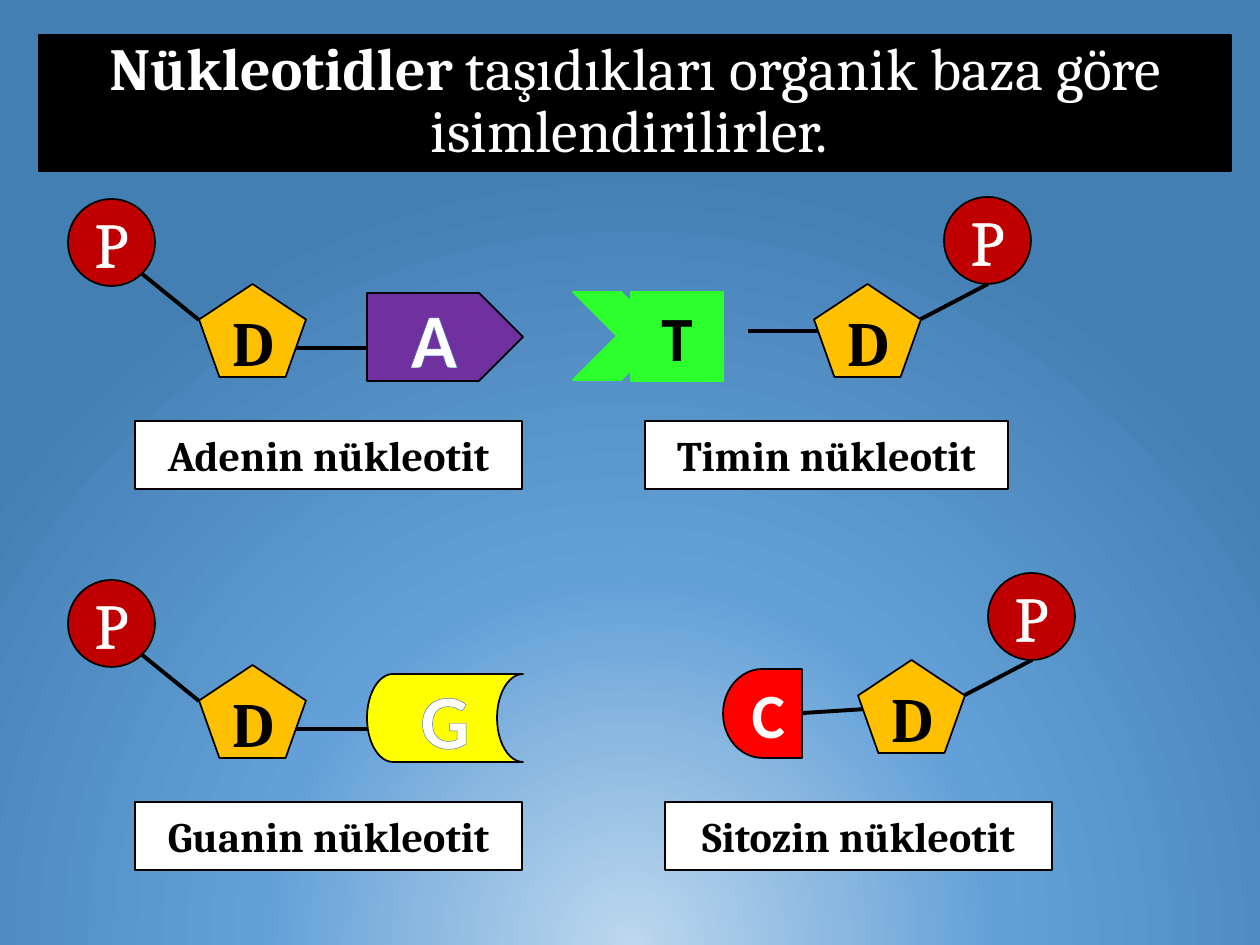
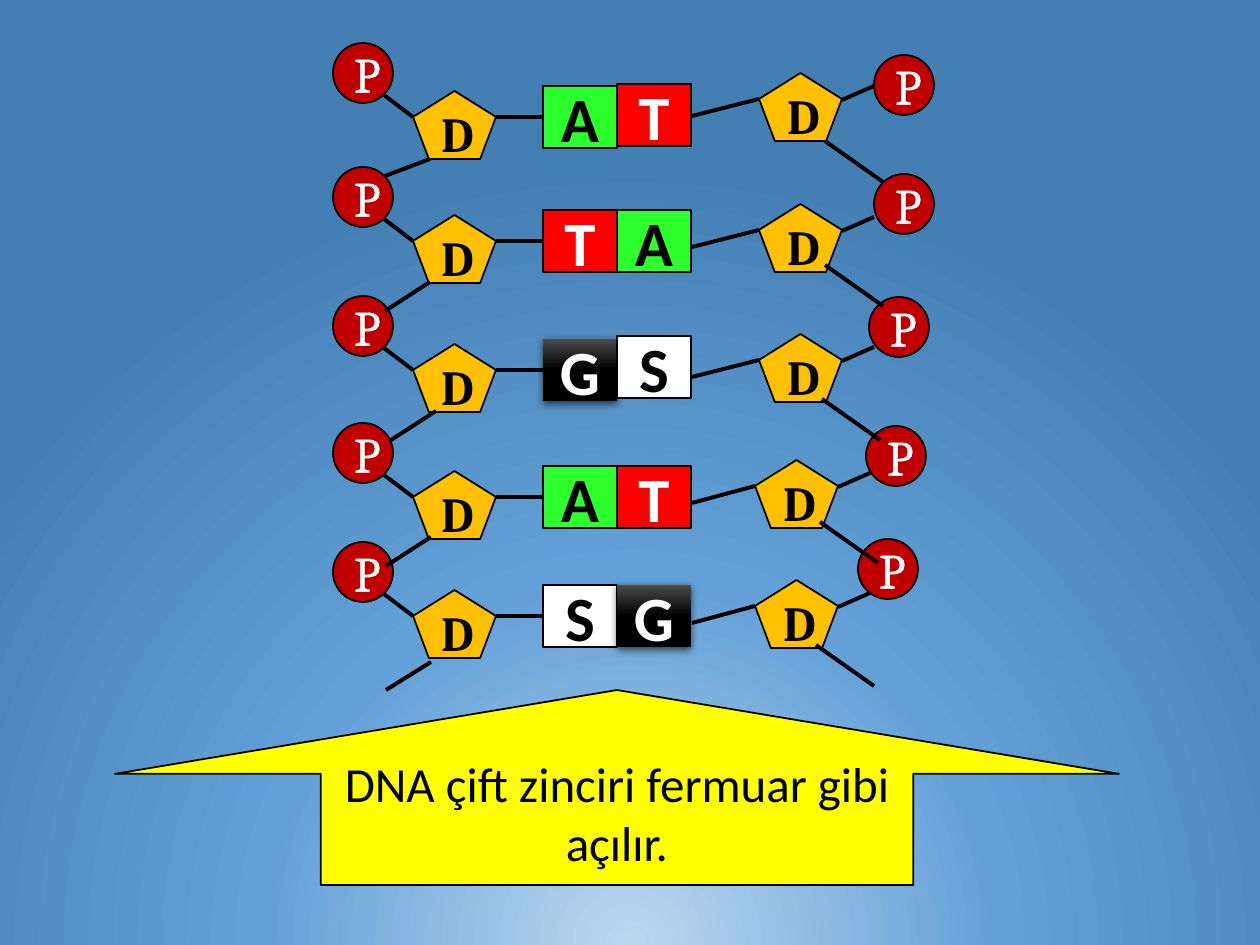
"""Build two slides on nucleotides and the DNA double chain."""
from dataclasses import dataclass
from typing import NamedTuple

from pptx import Presentation
from pptx import oxml
from pptx import util as u
from pptx.dml.color import RGBColor
from pptx.enum import shapes, text
from pptx.oxml import ns

PX = 914400 / 126
SHAPE = shapes.MSO_SHAPE


@dataclass(frozen=True)
class Theme:
    """Colours, fonts and type sizes of the deck."""
    black: str = "000000"
    white: str = "FFFFFF"
    soft_white: str = "FEFEFE"
    phosphate: str = "C00000"
    sugar: str = "FFC000"
    purple: str = "7030A0"
    green: str = "2DFF2D"
    red: str = "FF0000"
    yellow: str = "FFFF00"
    blue_edge: str = "4472C4"
    sky_edge: str = "5B9BD5"
    serif: str = "Cambria"
    sans: str = "Calibri"
    title: float = 34.1
    caption: int = 24
    body: int = 28
    letter: int = 36
    big_letter: int = 44
    backdrop: tuple = ((0, "BDD7EE", 62), (47, "63A0D7", 100), (100, "447FB4", 100))
    gloss: tuple = ((0, "4B4B4B", 100), (50, "000000", 100), (100, "000000", 100))


T = Theme()


class Type(NamedTuple):
    """Character format of one piece of text."""
    size: float
    font: str
    color: str
    bold: bool = False
    edge: str = ""
    edge_pt: float = 0.75
    spacing: int = 0


class Rung(NamedTuple):
    """One base pair and the parts that hold it on both sides."""
    pair: str
    left_top: int
    left_chain: tuple
    drop: int
    mate_top: int
    right_sugar: tuple
    right_phosphate: tuple
    right_chain: tuple


DARK = Type(T.letter, T.sans, T.black, True)
LIGHT = Type(T.letter, T.sans, T.soft_white, True, T.sky_edge, 0.75, 50)
BIG = Type(T.big_letter, T.sans, T.white, True, T.blue_edge, 0.8)
CAPTION = Type(T.caption, T.serif, T.black, True)
BASES = {"A": (T.green, DARK), "T": (T.red, LIGHT), "S": (T.white, DARK), "G": (T.gloss, LIGHT)}

RUNGS = [
    Rung("AT", 91, (430, 159), 17, 84, (759, 73), (874, 55), (825, 141)),
    Rung("TA", 215, (430, 282), 29, 210, (759, 204), (874, 174), (825, 265)),
    Rung("GS", 344, (436, 411), 29, 336, (759, 334), (869, 297), (822, 399)),
    Rung("AT", 471, (431, 537), 29, 466, (755, 460), (866, 426), (820, 522)),
    Rung("SG", 590, (431, 662), 28, 585, (755, 580), (858, 539), (816, 645)),
]


def px(n):
    """Turn px into EMU."""
    return u.Emu(round(n * PX))


def rgb(color):
    """Turn a hex string into a colour."""
    return RGBColor.from_string(color)


def xml(body):
    """Parse a DrawingML fragment."""
    head, rest = body.split(" ", 1)
    return oxml.parse_xml(f"{head} {ns.nsdecls('a')} {rest}")


def set_gradient(fill, holder, stops, direction):
    """Give a fill a gradient with the stops and direction."""
    fill.gradient()
    marks = "".join(
        f'<a:gs pos="{pos * 1000}"><a:srgbClr val="{color}">'
        f'<a:alpha val="{alpha * 1000}"/></a:srgbClr></a:gs>'
        for pos, color, alpha in stops)
    new = xml(f'<a:gradFill rotWithShape="1"><a:gsLst>{marks}</a:gsLst>{direction}</a:gradFill>')
    holder.replace(holder.xpath("a:gradFill")[0], new)


def set_backdrop(master):
    """Give every slide the circular blue gradient."""
    fill = master.background.fill
    fill.gradient()
    set_gradient(fill, master.element.xpath(".//p:bgPr")[0], T.backdrop,
                 '<a:path path="circle"><a:fillToRect l="50000" t="130000" r="50000" b="-30000"/></a:path>')


def style_run(r, kind):
    """Apply a character format to a run."""
    r.font.size, r.font.name, r.font.bold = u.Pt(kind.size), kind.font, kind.bold
    r.font.color.rgb = rgb(kind.color)
    rPr = r.font._element
    if kind.spacing:
        rPr.set("spc", str(kind.spacing))
    if kind.edge:
        rPr.insert(0, xml(f'<a:ln w="{u.Pt(kind.edge_pt)}"><a:solidFill>'
                          f'<a:srgbClr val="{kind.edge}"/></a:solidFill></a:ln>'))


def set_paint(sp, fill, line=T.black):
    """Set a solid fill and a thin line."""
    sp.fill.solid()
    sp.fill.fore_color.rgb = rgb(fill)
    sp.line.color.rgb = rgb(line)
    sp.line.width = u.Pt(1)


def set_gloss(sp):
    """Set a glossy black fill with a soft shadow and no line."""
    spPr = sp.element.spPr
    set_gradient(sp.fill, spPr, T.gloss, '<a:lin ang="5400000" scaled="0"/>')
    sp.line.fill.background()
    spPr.xpath("a:effectLst")[0].append(xml(
        f'<a:outerShdw blurRad="{u.Pt(4.5)}" dist="{u.Pt(1.5)}" dir="5400000" rotWithShape="0">'
        '<a:srgbClr val="000000"><a:alpha val="63000"/></a:srgbClr></a:outerShdw>'))


def add_figure(s, preset, box, fill, label="", kind=None, line=T.black):
    """Add a preset shape with a centred label."""
    sp = s.shapes.add_shape(preset, *map(px, box))
    sp.shadow.inherit = False
    if fill == T.gloss:
        set_gloss(sp)
    else:
        set_paint(sp, fill, line)
    if label:
        p = sp.text_frame.paragraphs[0]
        p.text = label
        p.alignment = text.PP_ALIGN.CENTER
        style_run(p.runs[0], kind)
    return sp


def add_bond(s, x1, y1, x2, y2):
    """Add a straight black bond."""
    c = s.shapes.add_connector(shapes.MSO_CONNECTOR.STRAIGHT, *map(px, (x1, y1, x2, y2)))
    c.line.color.rgb = rgb(T.black)
    c.line.width = u.Pt(2.25)
    c.element.spPr.append(xml("<a:effectLst />"))


def add_phosphate(s, x, y, side, size):
    """Add a phosphate circle."""
    add_figure(s, SHAPE.OVAL, (x, y, side, side), T.phosphate, "P",
               Type(size, T.serif, T.white, edge=T.white))


def add_sugar(s, x, y, w, h, size):
    """Add a deoxyribose pentagon."""
    add_figure(s, SHAPE.REGULAR_PENTAGON, (x, y, w, h), T.sugar, "D",
               Type(size, T.serif, T.black, True))


def add_backbone(s, x, y, on_left):
    """Add a large sugar with its phosphate on one side."""
    if on_left:
        add_bond(s, x - 58, y - 11, x, y + 36)
        add_phosphate(s, x - 131, y - 85, 87, T.letter)
    else:
        add_bond(s, x + 107, y + 35, x + 174, y)
        add_phosphate(s, x + 130, y - 87, 87, T.letter)
    add_sugar(s, x, y, 107, 93, T.letter)


def add_caption(s, x, y, w, label):
    """Add a white caption box."""
    add_figure(s, SHAPE.RECTANGLE, (x, y, w, 68), T.white, label, CAPTION)


def add_title(s):
    """Turn the title placeholder into the black title band."""
    sp = s.shapes.title
    sp.left, sp.top, sp.width, sp.height = map(px, (39, 35, 1192, 136))
    set_paint(sp, T.black)
    tf = sp.text_frame
    tf.word_wrap = True
    tf.auto_size = text.MSO_AUTO_SIZE.NONE
    tf.vertical_anchor = text.MSO_ANCHOR.MIDDLE
    p = tf.paragraphs[0]
    p.alignment = text.PP_ALIGN.CENTER
    p.line_spacing = 0.87
    for words, bold in (("Nükleotidler ", True),
                        ("taşıdıkları organik baza göre isimlendirilirler. ", False)):
        r = p.add_run()
        r.text = words
        style_run(r, Type(T.title, T.serif, T.white, bold))


def add_purines(s):
    """Add the adenine and guanine nucleotides on the left."""
    rows = (("A", "Adenin nükleotit", SHAPE.PENTAGON, T.purple),
            ("G", "Guanin nükleotit", SHAPE.FLOWCHART_STORED_DATA, T.yellow))
    for i, (letter, name, preset, fill) in enumerate(rows):
        y = 284 + 381 * i
        add_bond(s, 294, y + 64, 383, y + 64)
        add_backbone(s, 199, y, True)
        add_figure(s, preset, (367, y + 9, 156, 88), fill, letter, BIG)
        add_caption(s, 135, y + 137, 387, name)


def add_pyrimidines(s):
    """Add the thymine and cytosine nucleotides on the right."""
    add_bond(s, 748, 331, 839, 331)
    add_backbone(s, 814, 284, False)
    add_figure(s, SHAPE.RECTANGLE, (631, 292, 92, 89), T.green, "T", DARK, T.green)
    add_figure(s, SHAPE.CHEVRON, (573, 292, 92, 88), T.green, line=T.green)
    add_caption(s, 645, 421, 363, "Timin nükleotit")

    add_bond(s, 803, 713, 882, 708)
    add_backbone(s, 858, 660, False)
    cytosine = add_figure(s, SHAPE.FLOWCHART_DELAY, (723, 669, 79, 89), T.red, "C", LIGHT)
    cytosine.element.spPr.xfrm.set("flipH", "1")
    add_caption(s, 665, 802, 387, "Sitozin nükleotit")


def add_rung(s, rung):
    """Add the sugars, phosphates and bases of one rung."""
    y = rung.left_top
    add_phosphate(s, 333, y - 48, 60, T.body)
    add_sugar(s, 413, y, 83, 68, T.body)
    for letter, x, top in zip(rung.pair, (543, 617), (y - 5, rung.mate_top)):
        add_figure(s, SHAPE.RECTANGLE, (x, top, 74, 62), BASES[letter][0], letter, BASES[letter][1])
    add_sugar(s, *rung.right_sugar, 83, 68, T.body)
    add_phosphate(s, *rung.right_phosphate, 60, T.body)


def add_rung_bonds(s, rung):
    """Add the bonds inside one rung and down to the next."""
    y = rung.left_top
    add_bond(s, 384, y + 4, 413, y + 26)
    add_bond(s, 496, y + 26, 543, y + 26)
    x, y = rung.left_chain
    add_bond(s, x, y, x - 45, y + rung.drop)
    x, y = rung.right_sugar
    add_bond(s, 692, y + 43, x, y + 26)
    add_bond(s, x + 83, y + 27, x + 115, y + 13)
    x, y = rung.right_chain
    add_bond(s, x, y, x + 58, y + 41)


def add_zipper_arrow(s):
    """Add the yellow arrow with the closing statement."""
    sp = add_figure(s, SHAPE.UP_ARROW, (115, 690, 1004, 195), T.yellow,
                    "DNA çift zinciri fermuar gibi açılır.", Type(T.body, T.sans, T.black))
    sp.adjustments[0], sp.adjustments[1] = 0.59, 0.43


def main():
    """Build and save the deck."""
    prs = Presentation()
    prs.slide_width, prs.slide_height = px(1260), px(945)
    set_backdrop(prs.slide_master)

    s = prs.slides.add_slide(prs.slide_layouts.get_by_name("Title Only"))
    add_title(s)
    add_purines(s)
    add_pyrimidines(s)

    s = prs.slides.add_slide(prs.slide_layouts.get_by_name("Blank"))
    for add in (add_rung, add_rung_bonds):
        for rung in RUNGS:
            add(s, rung)
    add_zipper_arrow(s)

    prs.save("out.pptx")


if __name__ == "__main__":
    main()
